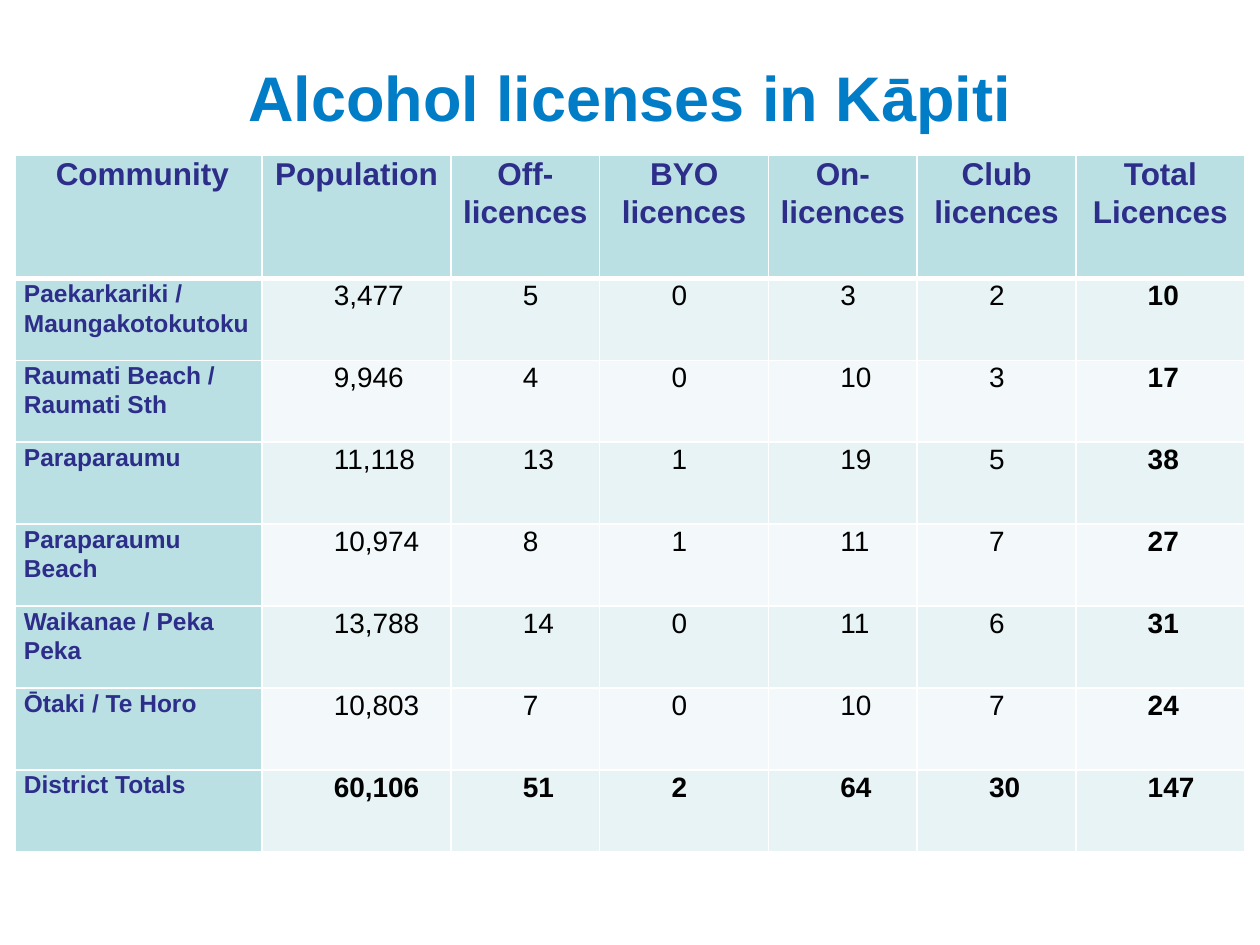
from lxml.etree import SubElement
from pptx import Presentation
from pptx.dml.color import RGBColor
from pptx.enum.text import MSO_ANCHOR, PP_ALIGN
from pptx.oxml.ns import qn
from pptx.util import Inches, Pt

FONT = "Arial"
COLORS = {
    "title": "007DC6",
    "heading": "2D2D8A",
    "body": "000000",
    "header_fill": "BBE0E3",
    "odd_fill": "E7F3F4",
    "even_fill": "F3F9FA",
    "border": "FFFFFF",
}
COLUMN_WIDTHS = [1.96, 1.5, 1.18, 1.34, 1.18, 1.26, 1.34]
HEADER_HEIGHT = 0.98
ROW_HEIGHT = 0.65
LICENCE_ROWS = [
    ["Community", "Population", "Off-\nlicences", "BYO\nlicences",
     "On-\nlicences", "Club\nlicences", "Total\nLicences"],
    ["Paekarkariki / Maungakotokutoku", "3,477", "5", "0", "3", "2", "10"],
    ["Raumati Beach / Raumati Sth", "9,946", "4", "0", "10", "3", "17"],
    ["Paraparaumu", "11,118", "13", "1", "19", "5", "38"],
    ["Paraparaumu Beach", "10,974", "8", "1", "11", "7", "27"],
    ["Waikanae / Peka Peka", "13,788", "14", "0", "11", "6", "31"],
    ["Ōtaki / Te Horo", "10,803", "7", "0", "10", "7", "24"],
    ["District Totals", "60,106", "51", "2", "64", "30", "147"],
]


def style_font(paragraph, size, color, bold):
    for run in paragraph.runs:
        font = run.font
        font.name, font.size, font.bold = FONT, Pt(size), bold
        font.color.rgb = RGBColor.from_string(COLORS[color])


def add_title(slide, text):
    box = slide.shapes.add_textbox(Inches(0.5), Inches(0.3), Inches(9), Inches(0.93))
    frame = box.text_frame
    frame.word_wrap = True
    frame.vertical_anchor = MSO_ANCHOR.MIDDLE
    frame.text = text
    paragraph = frame.paragraphs[0]
    paragraph.alignment = PP_ALIGN.CENTER
    style_font(paragraph, 36, "title", True)


def set_borders(cell, top, bottom):
    """Draw the four cell edges; top and bottom are widths in points."""
    properties = cell._tc.get_or_add_tcPr()
    for edge, width in (("L", 1), ("R", 1), ("T", top), ("B", bottom)):
        line = SubElement(properties, qn(f"a:ln{edge}"), w=str(Pt(width)))
        fill = SubElement(line, qn("a:solidFill"))
        SubElement(fill, qn("a:srgbClr"), val=COLORS["border"])


def set_fill(cell, color):
    cell.fill.solid()
    cell.fill.fore_color.rgb = RGBColor.from_string(COLORS[color])


def write_cell(cell, text, indent=0.0):
    cell.margin_left = cell.margin_right = Inches(0.07)
    cell.margin_top = cell.margin_bottom = 0
    paragraph = cell.text_frame.paragraphs[0]
    paragraph.text = text
    paragraph.line_spacing = 1.07
    paragraph.space_after = Pt(8)
    if indent:
        properties = paragraph._p.get_or_add_pPr()
        properties.set("marL", str(Inches(indent)))
        properties.set("indent", "0")
    return paragraph


def format_cell(cell, text, row, column):
    is_header, is_label = row == 0, column == 0
    set_borders(cell, top=3 if row == 1 else 1, bottom=3 if is_header else 1)
    if is_header:
        set_fill(cell, "header_fill")
        paragraph = write_cell(cell, text, 0.06 if is_label else 0)
        paragraph.alignment = PP_ALIGN.CENTER
        style_font(paragraph, 18, "heading", True)
    elif is_label:
        set_fill(cell, "header_fill")
        style_font(write_cell(cell, text), 14, "heading", True)
    else:
        set_fill(cell, "odd_fill" if row % 2 else "even_fill")
        is_total = row == len(LICENCE_ROWS) - 1 or column == len(COLUMN_WIDTHS) - 1
        style_font(write_cell(cell, text, 0.5), 16, "body", is_total)


def add_licence_table(slide):
    heights = [HEADER_HEIGHT] + [ROW_HEIGHT] * (len(LICENCE_ROWS) - 1)
    table = slide.shapes.add_table(
        len(heights), len(COLUMN_WIDTHS), Inches(0.12), Inches(1.23),
        Inches(sum(COLUMN_WIDTHS)), Inches(sum(heights))).table
    for column, width in zip(table.columns, COLUMN_WIDTHS):
        column.width = Inches(width)
    for row, height in zip(table.rows, heights):
        row.height = Inches(height)
    for row, texts in enumerate(LICENCE_ROWS):
        for column, text in enumerate(texts):
            format_cell(table.cell(row, column), text, row, column)


def main():
    presentation = Presentation()
    presentation.slide_width = Inches(10)
    presentation.slide_height = Inches(7.5)
    slide = presentation.slides.add_slide(presentation.slide_layouts[6])
    add_title(slide, "Alcohol licenses in Kāpiti")
    add_licence_table(slide)
    presentation.save("out.pptx")


if __name__ == "__main__":
    main()
